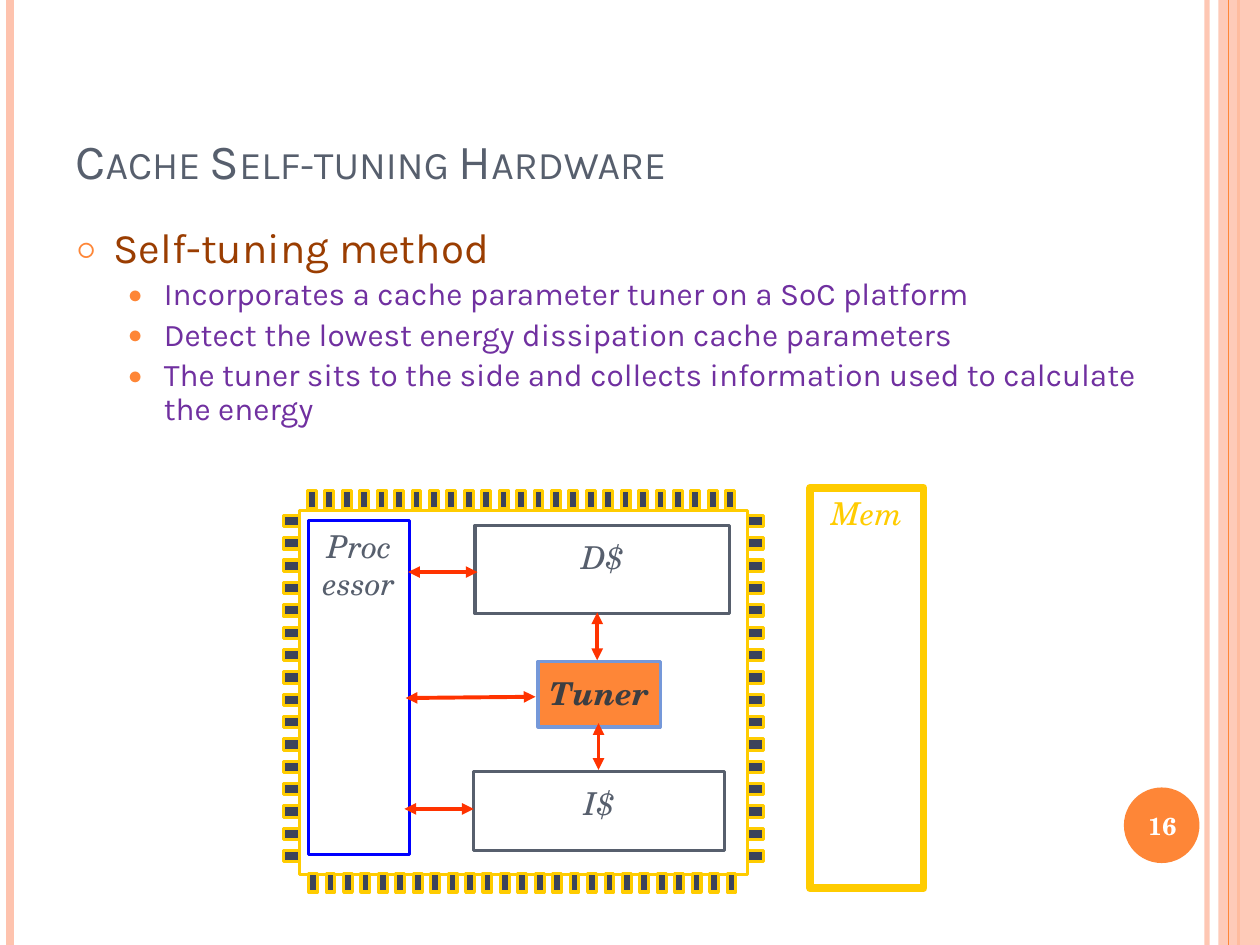
from pptx import Presentation
from pptx.dml.color import RGBColor
from pptx.enum.shapes import MSO_CONNECTOR as Link, MSO_SHAPE as Form
from pptx.enum.text import MSO_ANCHOR as Anchor, MSO_AUTO_SIZE as Fit, PP_ALIGN as Align
from pptx.oxml.ns import qn
from pptx.util import Inches, Pt
from lxml.etree import SubElement as Sub

PEACH, ORANGE, SLATE = "FEC3AE", "FE8637", "575F6D"
GOLD, RED, NAVY = "FFCC00", "FF3300", "3B435B"


def tint(code):
    return RGBColor.from_string(code)


def fade(part, percent):
    """Set the opacity of the solid colour found in an XML part."""
    color = next(part.iter(qn("a:srgbClr")))
    Sub(color, qn("a:alpha"), val=str(percent * 1000))


def spread(first, last, count):
    """Return evenly spaced positions, both ends included."""
    step = (last - first) / (count - 1)
    return [first + i * step for i in range(count)]


class Deck:
    sans = "Karla"
    serif = "TeX Gyre Schola"

    def __init__(self):
        self.prs = Presentation()
        self.prs.slide_width, self.prs.slide_height = Inches(10), Inches(7.5)
        self.slide = self.prs.slides.add_slide(self.prs.slide_layouts[1])

    def style(self, run, color, size, **more):
        looks = {"name": self.serif, "size": Pt(size), **more}
        for key, value in looks.items():
            setattr(run.font, key, value)
        run.font.color.rgb = tint(color)

    def place(self, item, at):
        for key, value in zip(("left", "top", "width", "height"), at):
            setattr(item, key, Inches(value))

    def title(self, text, at):
        item = self.slide.shapes.title
        self.place(item, at)
        frame = item.text_frame
        frame.auto_size, frame.vertical_anchor = Fit.NONE, Anchor.BOTTOM
        para = frame.paragraphs[0]
        para.alignment = Align.LEFT
        run = para.add_run()
        run.text = text
        self.style(run, SLATE, 28, name=self.sans)
        run.font._element.set("cap", "small")

    def bullets(self, rows, at):
        """Fill the body with rows of (level, text)."""
        kinds = {
            0: {"mark": "○", "scale": 70, "left": 0.3, "size": 24, "color": "9A3D01", "gap": 6},
            1: {"mark": "●", "scale": 80, "left": 0.7, "size": 18, "color": "7030A0", "gap": 3.6},
        }
        item = self.slide.placeholders[1]
        self.place(item, at)
        frame = item.text_frame
        frame.auto_size = Fit.NONE
        for i, (level, text) in enumerate(rows):
            kind = kinds[level]
            para = frame.add_paragraph() if i else frame.paragraphs[0]
            para.level, para.line_spacing = level, 0.9
            para.space_before = Pt(kind["gap"])
            props = para._p.get_or_add_pPr()
            props.set("marL", str(Inches(kind["left"])))
            props.set("indent", str(Inches(-0.3)))
            Sub(Sub(props, qn("a:buClr")), qn("a:srgbClr"), val=ORANGE)
            Sub(props, qn("a:buSzPct"), val=str(kind["scale"] * 1000))
            Sub(props, qn("a:buFont"), typeface=self.serif)
            Sub(props, qn("a:buChar"), char=kind["mark"])
            run = para.add_run()
            run.text = text
            self.style(run, kind["color"], kind["size"], name=self.sans)

    def box(self, at, fill=None, line=None, width=1.75, form=Form.RECTANGLE, turn=0):
        item = self.slide.shapes.add_shape(form, *map(Inches, at))
        item.shadow.inherit = False
        item.rotation = turn
        if fill:
            item.fill.solid()
            item.fill.fore_color.rgb = tint(fill)
        else:
            item.fill.background()
        if line:
            item.line.color.rgb = tint(line)
            item.line.width = Pt(width)
        else:
            item.line.fill.background()
        return item

    def label(self, item, text, color, inset=(0, 0.1, 0, 0), anchor=Anchor.TOP, size=18, **font):
        frame = item.text_frame
        frame.word_wrap, frame.vertical_anchor = True, anchor
        for side, value in zip(("left", "top", "right", "bottom"), inset):
            setattr(frame, f"margin_{side}", Inches(value))
        para = frame.paragraphs[0]
        para.alignment = Align.CENTER
        run = para.add_run()
        run.text = text
        self.style(run, color, size, **font)

    def text(self, at, *args, **opts):
        self.label(self.slide.shapes.add_textbox(*map(Inches, at)), *args, **opts)

    def line(self, start, end, color, width):
        item = self.slide.shapes.add_connector(Link.STRAIGHT, *map(Inches, start + end))
        item.line.color.rgb = tint(color)
        item.line.width = Pt(width)
        Sub(item._element.spPr, qn("a:effectLst"))
        return item

    def arrow(self, start, end):
        item = self.line(start, end, RED, 2.25)
        for tip in ("a:headEnd", "a:tailEnd"):
            Sub(item.line._get_or_add_ln(), qn(tip), type="triangle")


def frame(deck):
    """Draw the side stripes and the page number."""
    for x, color, width in ((9.58, PEACH, 3), (0.08, PEACH, 4.5), (9.83, ORANGE, 1.5)):
        stripe = deck.line((x, 0), (x, 7.5), color, width)
        if x == 9.58:
            fade(stripe._element.spPr, 93)
    band = deck.box((9.67, 0, 0.33, 7.5), PEACH)
    fade(band._element.spPr, 87)
    deck.line((9.75, 0), (9.75, 7.5), ORANGE, 0.75)
    deck.box((8.92, 6.25, 0.6, 0.6), ORANGE, form=Form.OVAL)
    deck.text((8.89, 6.27, 0.67, 0.57), "16", "FFFFFF", inset=(0.1, 0.05, 0.1, 0.05),
              anchor=Anchor.MIDDLE, size=14, bold=True)


def chip(deck):
    memory = deck.box((6.43, 3.87, 0.9, 3.18), line=GOLD, width=4.5)
    deck.label(memory, "Mem", GOLD, (0, 0.05, 0, 0.05), italic=True)
    deck.box((2.38, 4.05, 3.55, 2.89), line=GOLD)
    core = deck.box((2.45, 4.13, 0.8, 2.65), line="0000FF")
    deck.label(core, "Processor", SLATE, (0.1, 0.05, 0.1, 0.05), italic=True)

    for left, top in ((2.4, 3.93), (2.41, 6.97)):
        for x in spread(left, left + 3.32, 25):
            deck.box((x, top, 0.15, 0.07), NAVY, GOLD, turn=90)
    for x in (2.25, 5.93):
        for y in spread(4.09, 6.75, 16):
            deck.box((x, y, 0.13, 0.09), NAVY, GOLD)

    for name, at in (("D$", (3.77, 4.17, 2.02, 0.7)), ("I$", (3.76, 6.12, 1.99, 0.63))):
        deck.label(deck.box(at, line=SLATE), name, SLATE, italic=True)
    tuner = deck.box((4.27, 5.25, 0.97, 0.52), ORANGE, "7598D9")
    deck.label(tuner, "Tuner", "3C3E42", bold=True, italic=True)

    for start, end in (
        ((3.24, 4.54), (3.79, 4.54)),
        ((3.21, 6.42), (3.76, 6.42)),
        ((3.22, 5.54), (4.25, 5.53)),
        ((4.74, 5.24), (4.74, 4.86)),
        ((4.75, 6.11), (4.75, 5.74)),
    ):
        deck.arrow(start, end)


def main():
    deck = Deck()
    frame(deck)
    deck.title("Cache Self-tuning Hardware", (0.5, 0.3, 8.17, 1.25))
    deck.bullets([
        (0, "Self-tuning method"),
        (1, "Incorporates a cache parameter tuner on a SoC platform"),
        (1, "Detect the lowest energy dissipation cache parameters"),
        (1, "The tuner sits to the side and collects information used to calculate the energy"),
    ], (0.5, 1.75, 8.83, 5.33))
    chip(deck)
    deck.prs.save("out.pptx")


if __name__ == "__main__":
    main()
